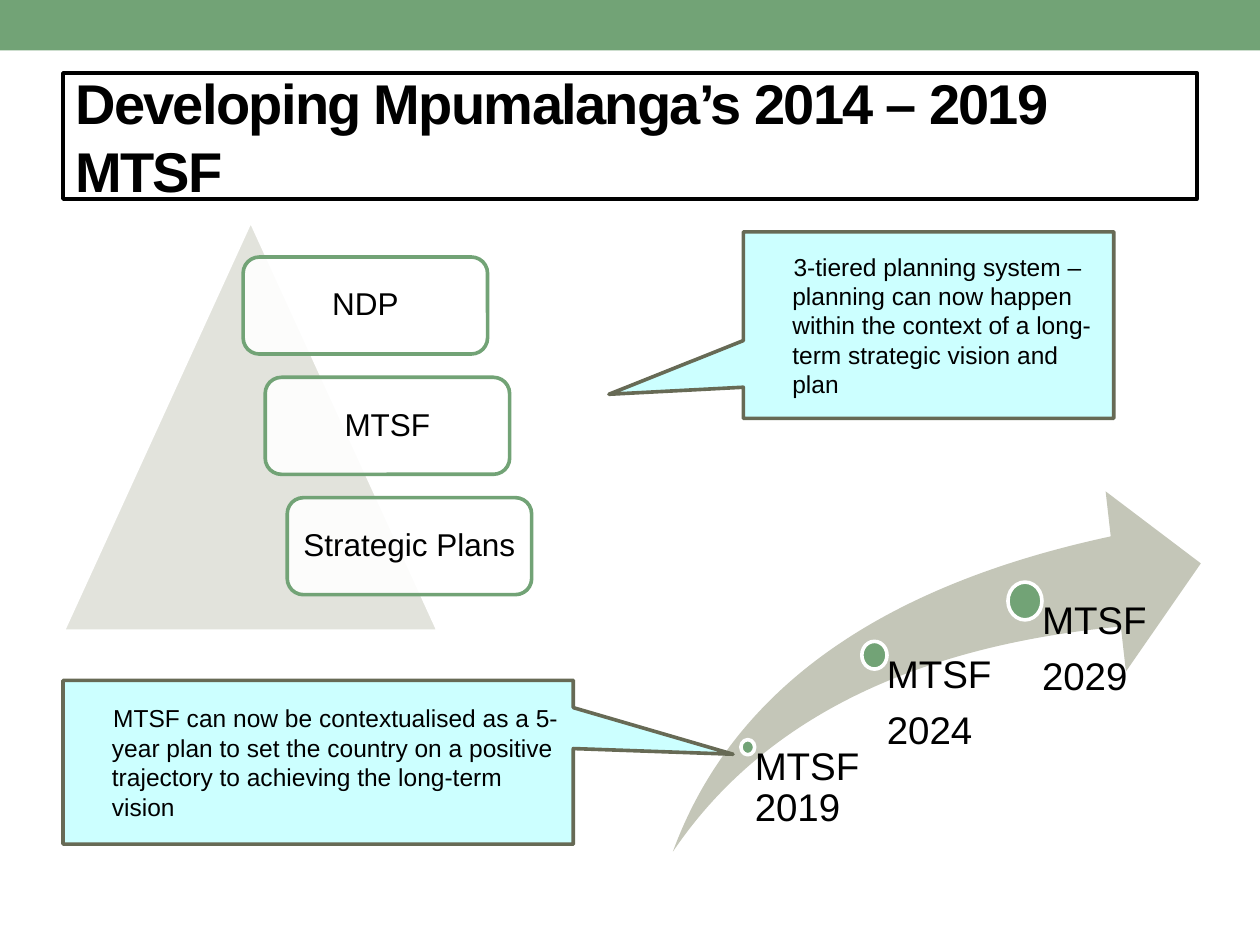
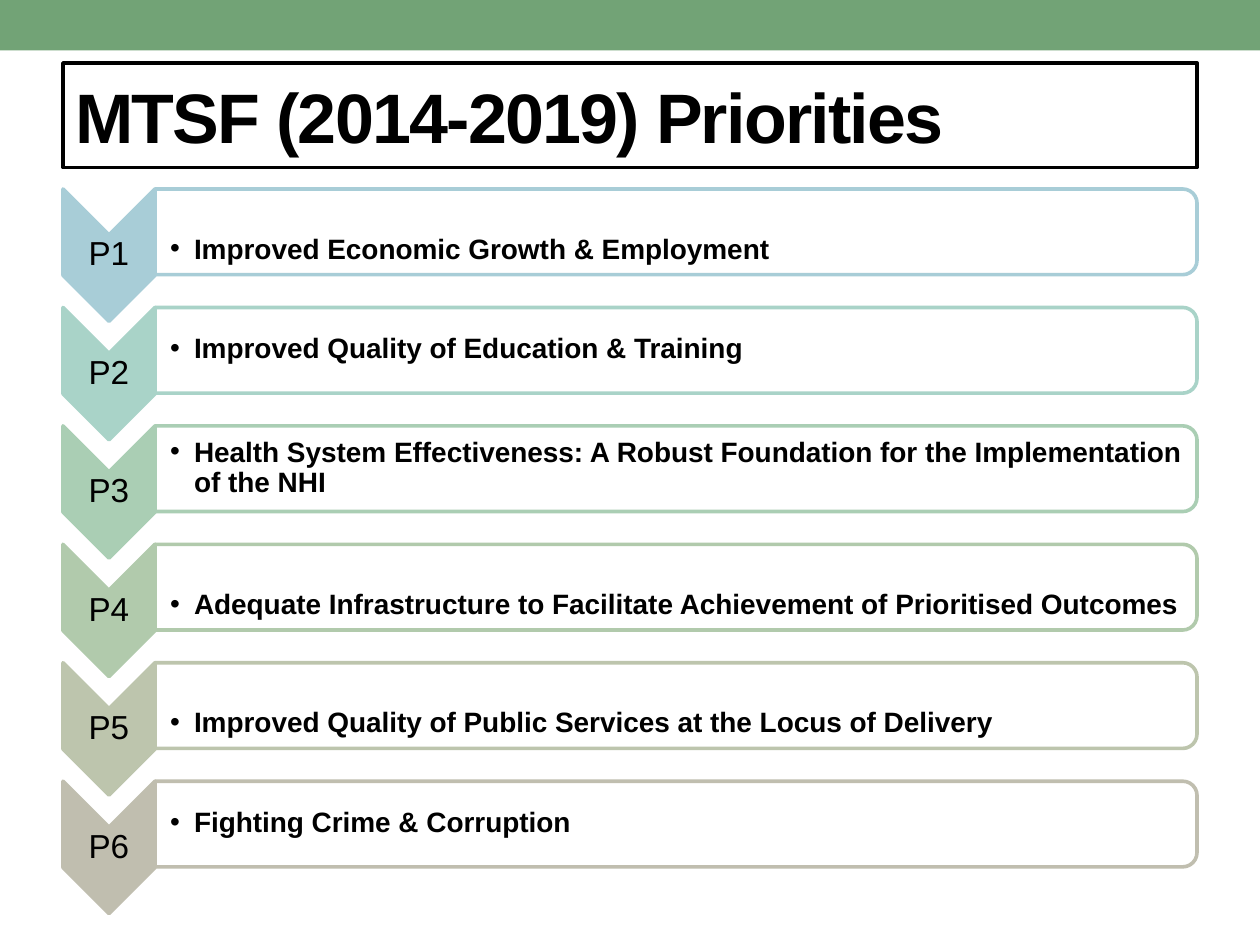
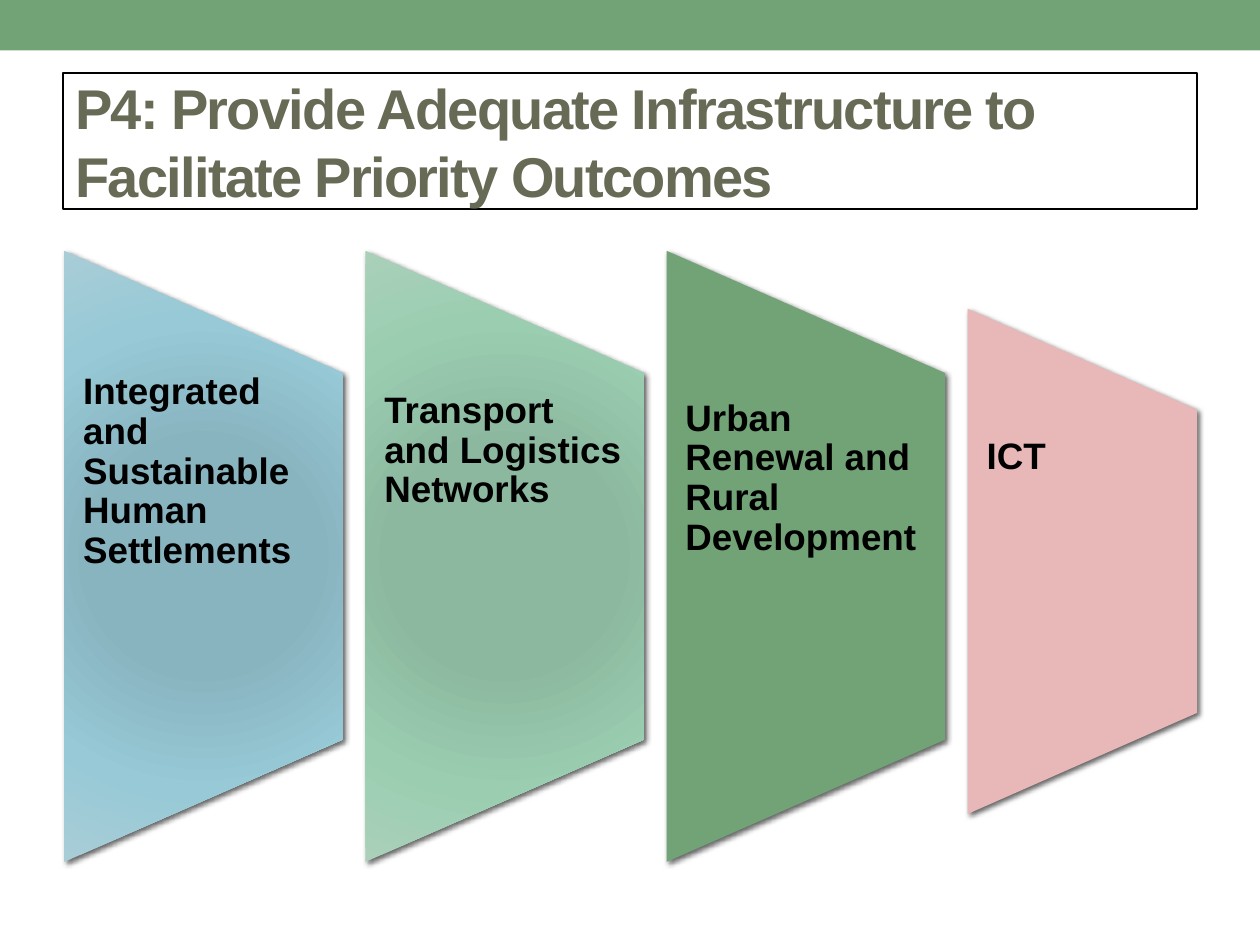
from lxml import etree
from pptx import Presentation
from pptx import util as u
from pptx.dml.color import RGBColor
from pptx.enum import shapes, text
from pptx.oxml import ns

FONT = "Arial"
COLORS = {
    "band": "72A376", "olive": "676A55", "black": "000000", "white": "FFFFFF",
    "pyramid": "E2E3DC", "callout": "CCFFFF", "swoosh": "C4C6B8", "rose": "E8B7B7",
}
LEFT, WIDTH = 0.5, 9  # content column shared by all slides
LINE = 2.08
MSO = shapes.MSO_SHAPE
TOP, MIDDLE = text.MSO_ANCHOR.TOP, text.MSO_ANCHOR.MIDDLE
CENTER, FLUSH = text.PP_ALIGN.CENTER, text.PP_ALIGN.LEFT


def rgb(name):
    return RGBColor.from_string(COLORS.get(name, name))


def add_xml(parent, tag, **attrs):
    el = etree.SubElement(parent, ns.qn("a:" + tag))
    for key, value in attrs.items():
        el.set(key, str(value))
    return el


# Element helpers
def shape(s, kind, box, fill=None, line=None, width=LINE, alpha=None, rot=0):
    """Draw a preset shape that covers box as seen, also after a quarter turn."""
    x, y, w, h = box
    if rot in (90, 270):
        x, y, w, h = x + (w - h) / 2, y + (h - w) / 2, h, w
    sp = s.shapes.add_shape(kind, *map(u.Inches, (x, y, w, h)))
    sp.rotation = rot
    sp.shadow.inherit = False
    if fill:
        sp.fill.solid()
        sp.fill.fore_color.rgb = rgb(fill)
    else:
        sp.fill.background()
    if line:
        sp.line.color.rgb = rgb(line)
        sp.line.width = u.Pt(width)
    else:
        sp.line.fill.background()
    if alpha:
        color = sp._element.spPr.find(".//" + ns.qn("a:srgbClr"))
        add_xml(color, "alpha", val=alpha * 1000)
    return sp


def write(sp, lines, size, color="black", bold=False, align=FLUSH, anchor=TOP,
          insets=(0.1, 0.05, 0.1, 0.05), spacing=0.9, after=0, indent=None,
          bullet=False, track=None):
    tf = sp.text_frame
    tf.word_wrap = True
    tf.vertical_anchor = anchor
    tf.margin_left, tf.margin_top, tf.margin_right, tf.margin_bottom = map(u.Inches, insets)
    tf.text = "\n".join(lines)
    for p in tf.paragraphs:
        p.alignment = align
        p.line_spacing = spacing
        p.space_after = u.Pt(after)
        pPr = p._p.get_or_add_pPr()
        if indent:
            pPr.set("marL", str(u.Inches(indent[0])))
            pPr.set("indent", str(u.Inches(indent[1])))
        if bullet:
            add_xml(pPr, "buFont", typeface=FONT)
            add_xml(pPr, "buChar", char="•")
        for r in p.runs:
            r.font.name, r.font.size, r.font.bold = FONT, u.Pt(size), bold
            r.font.color.rgb = rgb(color)
            if track:
                r._r.get_or_add_rPr().set("spc", str(track * 100))


def label(s, box, lines, size, **style):
    write(s.shapes.add_textbox(*map(u.Inches, box)), lines, size, **style)


def callout(s, box, tip, words):
    sp = shape(s, MSO.RECTANGULAR_CALLOUT, box, "callout", "olive")
    sp.adjustments[0], sp.adjustments[1] = tip
    write(sp, [words], 14, anchor=MIDDLE, spacing=1, indent=(0.29, 0.01))


def radial(sp, stops):
    spPr = sp._element.spPr
    grad = etree.Element(ns.qn("a:gradFill"), rotWithShape="1")
    gs_list = add_xml(grad, "gsLst")
    for pos, color in stops:
        add_xml(add_xml(gs_list, "gs", pos=pos * 1000), "srgbClr", val=color)
    circle = add_xml(grad, "path", path="circle")
    add_xml(circle, "fillToRect", **dict.fromkeys("ltrb", 100000))
    spPr.replace(spPr.find(ns.qn("a:noFill")), grad)


def drop_shadow(sp):
    effects = sp._element.spPr.find(ns.qn("a:effectLst"))
    shadow = add_xml(effects, "outerShdw", blurRad=u.Pt(3), dist=u.Pt(2),
                     dir=45 * 60000, algn="tl", rotWithShape=0)
    add_xml(add_xml(shadow, "srgbClr", val=COLORS["black"]), "alpha", val=60000)


def new_slide(prs, title, top, height, size=32, color="black", fill="white", width=LINE):
    s = prs.slides.add_slide(prs.slide_layouts[6])
    shape(s, MSO.RECTANGLE, (0, 0, 10, 0.4), "band")
    sp = shape(s, MSO.RECTANGLE, (LEFT, top, WIDTH, height), fill, "black", width)
    write(sp, [title], size, color, bold=True, anchor=MIDDLE, spacing=1, track=-1)
    return s


# Slide 1: planning tiers and the path of MTSF cycles
def planning_slide(prs):
    s = new_slide(prs, "Developing Mpumalanga’s 2014 – 2019 MTSF", 0.58, 1)
    shape(s, MSO.ISOSCELES_TRIANGLE, (LEFT, 1.75, 2.98, 3.26), "pyramid", "white")
    for i, tier in enumerate(["NDP", "MTSF", "Strategic Plans"]):
        box = (1.93 + 0.175 * i, 2.04 + 0.955 * i, 1.94, 0.77)
        sp = shape(s, MSO.ROUNDED_RECTANGLE, box, "white", "band", alpha=90)
        write(sp, [tier], 18, align=CENTER, anchor=MIDDLE, insets=[0.07] * 4)
    callout(s, (5.9, 1.84, 2.94, 1.48), (-0.863, 0.371),
            "3-tiered planning system – planning can now happen within the context "
            "of a long-term strategic vision and plan")

    swoosh = shape(s, MSO.SWOOSH_ARROW, (5.34, 3.9, 4.19, 2.86), "swoosh")
    swoosh.adjustments[0] = swoosh.adjustments[1] = 0.25
    cycles = [
        ((5.88, 5.87, 0.11, 0.12), 0.98, ["MTSF 2019"]),
        ((6.84, 5.09, 0.2, 0.22), 1.01, ["MTSF", "2024"]),
        ((8, 4.62, 0.27, 0.3), 1.01, ["MTSF", "2029"]),
    ]
    for dot, width, lines in cycles:
        shape(s, MSO.OVAL, dot, "band", "white")
        x, y = dot[0] + dot[2] / 2, dot[1] + dot[3] / 2
        label(s, (x, y, width, 6.76 - y), lines, 22, after=8.6,
              insets=(dot[2] / 2, 0, 0, 0))
    callout(s, (LEFT, 5.4, 4.05, 1.3), (0.813, -0.049),
            "MTSF can now be contextualised as a 5-year plan to set the country on a "
            "positive trajectory to achieving the long-term vision")


# Slide 2: one chevron row per priority
def priorities_slide(prs):
    s = new_slide(prs, "MTSF (2014-2019) Priorities", 0.5, 0.83, size=40)
    chevron_w, top, pitch = 0.73, 1.5, 0.94
    bar_x, bar_w = LEFT + chevron_w, WIDTH - chevron_w
    low, level = 0.31, 0.01  # top insets of the row texts
    priorities = [
        ("A8CDD7", low, "Improved Economic Growth & Employment"),
        ("A9D3C8", level, "Improved Quality of Education & Training"),
        ("AACEB4", level, "Health System Effectiveness: A Robust Foundation for the "
                          "Implementation of the NHI"),
        ("B1CAAC", low, "Adequate Infrastructure to Facilitate Achievement of "
                        "Prioritised Outcomes"),
        ("BDC5AD", low, "Improved Quality of Public Services at the Locus of Delivery"),
        ("C0BEAF", level, "Fighting Crime & Corruption"),
    ]
    for i, (color, inset, words) in enumerate(priorities):
        y = top + pitch * i
        shape(s, MSO.CHEVRON, (LEFT, y, chevron_w, 1.05), color, color, rot=90)
        label(s, (LEFT, y + 0.37, chevron_w, 0.31), [f"P{i + 1}"], 19,
              align=CENTER, anchor=MIDDLE, insets=[0.01] * 4)
        shape(s, MSO.ROUND_2_SAME_RECTANGLE, (bar_x, y, bar_w, 0.68), "white", color,
              alpha=90, rot=90)
        label(s, (bar_x, y + 0.03, bar_w - 0.04, 0.61), [words], 16, bold=True,
              anchor=MIDDLE, insets=(0.12, inset, 0.01, 0.01),
              indent=(0.19, -0.19), bullet=True)


# Slide 3: four infrastructure panels
def infrastructure_slide(prs):
    s = new_slide(prs, "P4: Provide Adequate Infrastructure to Facilitate Priority Outcomes",
                  0.58, 1.08, color="olive", fill=None, width=0.75)
    blue = [(0, "86B5C2"), (34, "88B4C0"), (70, "97C9D6"), (100, "A8CDD7")]
    green = [(0, "89BA9F"), (34, "8BB89F"), (70, "9BCEB1"), (100, "AAD0BA")]
    large, small = (1.99, 2.21, 4.85), (2.45, 1.82, 4.01)  # top, width, height
    panels = [
        (large, blue, 0, "Integrated and Sustainable Human Settlements"),
        (large, green, 0.15, "Transport and Logistics Networks"),
        (large, "band", 0.21, "Urban Renewal and Rural Development"),
        (small, "rose", 0.22, "ICT"),
    ]
    for i, ((y, w, h), fill, inset, words) in enumerate(panels):
        x = 0.51 + 2.39 * i
        solid = fill if isinstance(fill, str) else None
        sp = shape(s, MSO.FLOWCHART_MANUAL_OPERATION, (x, y, w, h), solid, rot=270)
        if not solid:
            radial(sp, fill)
        drop_shadow(sp)
        label(s, (x, y + 0.2 * h, w, 0.6 * h), [words], 21, bold=True,
              insets=(0.15, inset, 0.15, 0))


def main():
    prs = Presentation()
    prs.slide_width, prs.slide_height = u.Inches(10), u.Inches(7.5)
    planning_slide(prs)
    priorities_slide(prs)
    infrastructure_slide(prs)
    prs.save("out.pptx")


if __name__ == "__main__":
    main()
